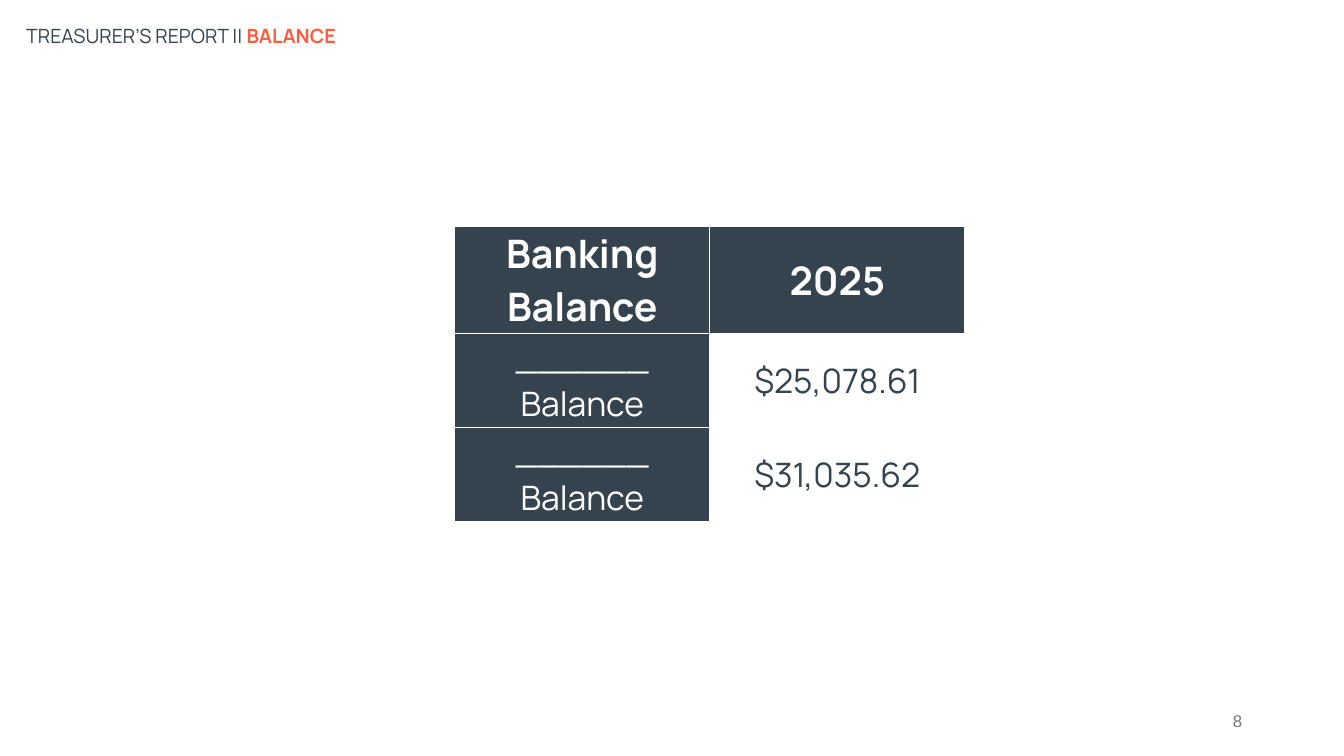
from lxml import etree
from pptx import Presentation
from pptx.dml.color import RGBColor
from pptx.enum.text import MSO_ANCHOR, MSO_AUTO_SIZE, PP_ALIGN
from pptx.oxml.ns import qn
from pptx.util import Inches, Pt

MIDDLE = MSO_ANCHOR.MIDDLE
NO_AUTOFIT = MSO_AUTO_SIZE.NONE
CENTER, RIGHT, JUSTIFY = PP_ALIGN.CENTER, PP_ALIGN.RIGHT, PP_ALIGN.JUSTIFY

COLORS = {"slate": "35434F", "coral": "FA5E3E", "gray": "757575", "white": "FFFFFF"}
TITLE_LAYOUT = 5

# Each cell is a list of paragraphs.
BALANCES = [
    [["Banking Balance"], ["2025"]],
    [["______ Balance"], ["$25,078.61"]],
    [["______", "Balance"], ["$31,035.62"]],
]


def add_run(p, text, size, color, bold=False, font="Manrope"):
    r = p.add_run()
    r.text = text
    r.font.name = font
    r.font.size = Pt(size)
    r.font.bold = bold
    r.font.color.rgb = RGBColor.from_string(COLORS[color])


def prepare_frame(tf, align):
    """Set wrapping and anchoring, and return the first paragraph."""
    tf.word_wrap = True
    tf.auto_size = NO_AUTOFIT
    tf.vertical_anchor = MIDDLE
    p = tf.paragraphs[0]
    p.alignment = align
    return p


def add_title(s, x, y, w, h):
    sp = s.shapes.title
    sp.left, sp.top, sp.width, sp.height = map(Inches, (x, y, w, h))
    p = prepare_frame(sp.text_frame, JUSTIFY)
    add_run(p, "TREASURER’S REPORT || ", 14, "slate")
    add_run(p, "BALANCE", 14, "coral", bold=True)


def add_page_number(s, x, y, w, h):
    sp = s.shapes.add_textbox(*map(Inches, (x, y, w, h)))
    p = prepare_frame(sp.text_frame, RIGHT)
    add_run(p, "8", 12, "gray", font="Arial")


def set_borders(cell, color, width):
    tc_pr = cell._tc.get_or_add_tcPr()
    for i, side in enumerate(("lnL", "lnR", "lnT", "lnB")):
        ln = etree.Element(qn(f"a:{side}"), w=str(Pt(width)))
        fill = etree.SubElement(ln, qn("a:solidFill"))
        etree.SubElement(fill, qn("a:srgbClr"), val=COLORS[color])
        tc_pr.insert(i, ln)


def fill_cell(cell, lines, is_header, is_dark):
    cell.margin_left = cell.margin_right = Inches(0.02)
    cell.margin_top = cell.margin_bottom = 0
    cell.vertical_anchor = MIDDLE
    if is_dark:
        cell.fill.solid()
        cell.fill.fore_color.rgb = RGBColor.from_string(COLORS["slate"])
    else:
        cell.fill.background()
    set_borders(cell, "white", 1)
    tf = cell.text_frame
    for i, line in enumerate(lines):
        p = tf.add_paragraph() if i else tf.paragraphs[0]
        p.alignment = CENTER
        add_run(p, line, 28 if is_header else 24,
                "white" if is_dark else "slate", bold=is_header)


def add_balance_table(s, x, y, w, h):
    rows, cols = len(BALANCES), len(BALANCES[0])
    frame = s.shapes.add_table(rows, cols, *map(Inches, (x, y, w, h)))
    table = frame.table
    table.first_row = table.horz_banding = False
    for i, row in enumerate(BALANCES):
        for j, lines in enumerate(row):
            fill_cell(table.cell(i, j), lines, i == 0, i == 0 or j == 0)


def main():
    prs = Presentation()
    prs.slide_width, prs.slide_height = Inches(13.33), Inches(7.5)
    s = prs.slides.add_slide(prs.slide_layouts[TITLE_LAYOUT])
    add_page_number(s, 9.42, 6.95, 3, 0.4)
    add_title(s, 0.16, 0.15, 11.5, 0.4)
    add_balance_table(s, 4.51, 2.25, 5.06, 2.8)
    prs.save("out.pptx")


if __name__ == "__main__":
    main()
